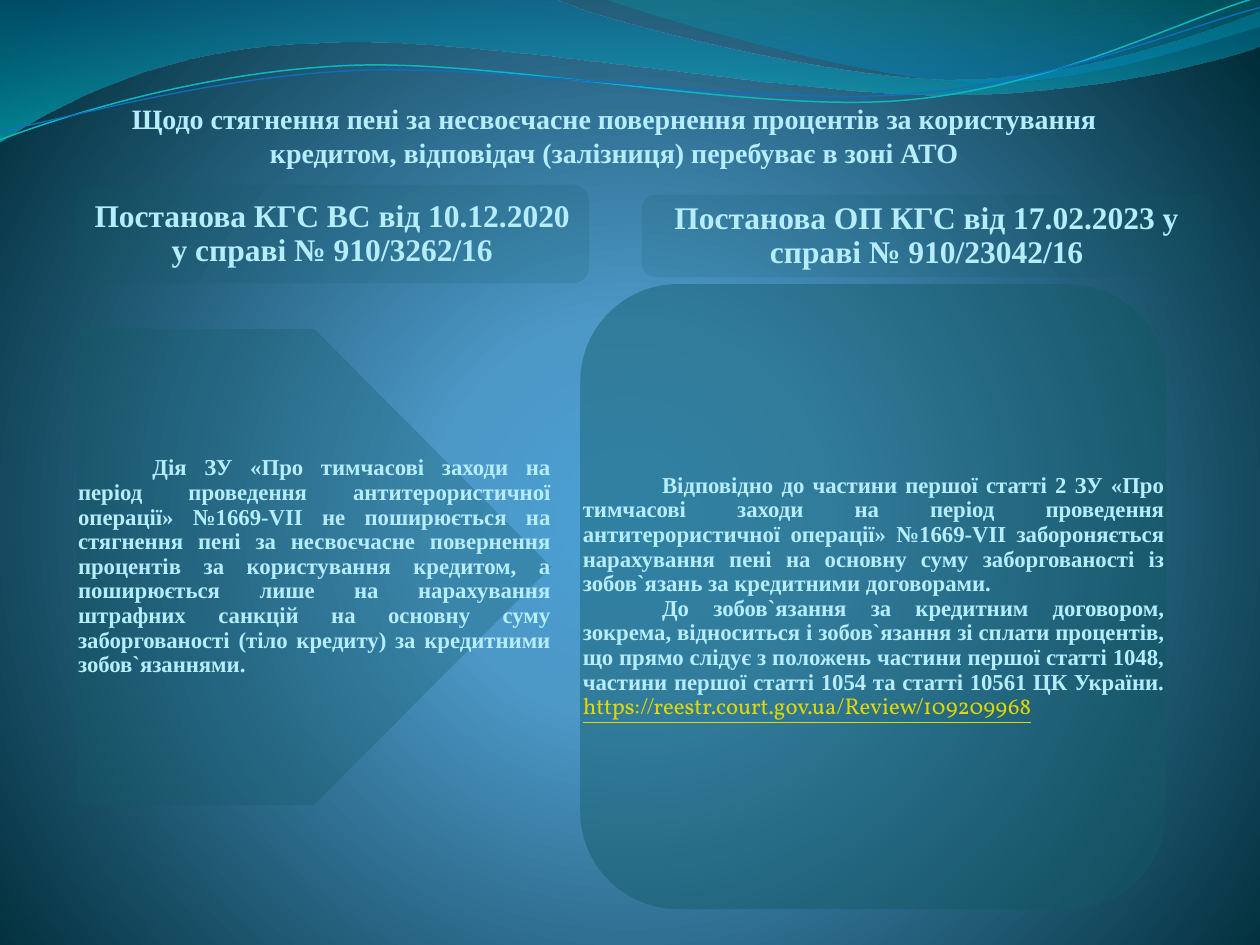
from dataclasses import dataclass
from itertools import chain
from typing import Optional

from lxml.etree import SubElement
from pptx import Presentation
from pptx.dml.color import RGBColor
from pptx.enum.shapes import MSO_SHAPE as Preset
from pptx.enum.text import MSO_ANCHOR as Anchor, MSO_AUTO_SIZE as AutoSize, PP_ALIGN as Align
from pptx.oxml import parse_xml
from pptx.oxml.ns import nsdecls, qn
from pptx.util import Inches, Pt

COLUMNS, ROWS = 100, 75
CELL = Inches(0.1)
SERIF, LINK_FONT = "Times New Roman", "Vollkorn"
PALE, LINK, PANEL = "B5EDFD", "E2D700", "115964"


@dataclass(frozen=True)
class Box:
    column: float
    row: float
    columns: float
    rows: float

    def lengths(self) -> list[int]:
        return [round(value * CELL) for value in (self.column, self.row, self.columns, self.rows)]


@dataclass(frozen=True)
class Run:
    text: str
    size: float
    font: str = SERIF
    color: str = PALE
    bold: bool = True
    underline: bool = False


@dataclass(frozen=True)
class Panel:
    preset: Preset
    box: Box
    opacity: int
    inset: float
    paragraphs: list[list[Run]]
    align: Align = Align.CENTER
    indent: float = 0


@dataclass(frozen=True)
class Wave:
    start: tuple
    segments: list[tuple]
    stops: Optional[list[tuple]] = None
    line: str = ""
    width: float = 0


WAVES = [
    Wave((0, 0), [(44, -0.1), (47.6, 1.7, 66.4, 6.3, 75.8, 6.3), (85.3, 6.3, 95.8, 2.6, 100, 0.9),
                  (100.1, 3.6), (98.3, 4.4, 87, 7.6, 74.6, 7.5), (62.2, 7.5, 38.2, 2.8, 25.7, 3.4),
                  (12.9, 3.6, 4.6, 8.3, -0.1, 11.3)],
         stops=[(0, "0074A1", 45), (100, "00C6CF", 55)]),
    Wave((47.9, -0.1), [(50.9, 1.1, 68.2, 6.2, 76.9, 6.5), (85.6, 6.9, 96.1, 3.2, 100, 2.1), (100, 0)],
         stops=[(0, "00A1A9", 30), (80, "008BBF", 45)]),
    Wave((0, 11.1), [(4.8, 9.3, 15.8, 5.7, 27.7, 5.2), (39.5, 4.7, 59.3, 8.9, 71.3, 8),
                     (83.3, 7.1, 93.8, 1.5, 99.8, -0.2)], line="0AB8BF", width=0.85),
    Wave((0, 10.4), [(4.7, 9.6, 16.4, 6.1, 28.3, 5.6), (40.3, 5.1, 59.7, 8.4, 71.7, 7.5),
                     (83.6, 6.7, 94.1, 2.1, 100, 0.6)], line="0F6FC6", width=0.75),
]

TITLE = Run("Щодо стягнення пені за несвоєчасне повернення процентів за користування кредитом, "
            "відповідач (залізниця) перебуває в зоні АТО", 16)

PANELS = [
    Panel(Preset.PENTAGON, Box(6.1, 26.1, 37.65, 37.8), 29, 0.1, [[Run(
        "Дія ЗУ «Про тимчасові заходи на період проведення антитерористичної операції» №1669-VII "
        "не поширюється на стягнення пені за несвоєчасне повернення процентів за користування "
        "кредитом, а поширюється лише на нарахування штрафних санкцій на основну суму "
        "заборгованості (тіло кредиту) за кредитними зобов`язаннями.", 13)]], Align.JUSTIFY, 5.9),
    Panel(Preset.FLOWCHART_ALTERNATE_PROCESS, Box(46.05, 22.55, 46.5, 49.6), 44, 0.2, [
        [Run("Відповідно до частини першої статті 2 ЗУ «Про тимчасові заходи на період проведення "
             "антитерористичної операції» №1669-VII забороняється нарахування пені на основну суму "
             "заборгованості із зобов`язань за кредитними договорами.", 13)],
        [Run("До зобов`язання за кредитним договором, зокрема, відноситься і зобов`язання зі сплати "
             "процентів, що прямо слідує з положень частини першої статті 1048, частини першої "
             "статті 1054 та статті 10561 ЦК України. ", 13),
         Run("https://reestr.court.gov.ua/Review/109209968", 13, LINK_FONT, LINK, False, True)],
    ], Align.JUSTIFY, 6.3),
    Panel(Preset.ROUNDED_RECTANGLE, Box(6, 14.65, 40.75, 7.85), 17, 0.7,
          [[Run("Постанова КГС ВС від 10.12.2020 у справі № 910/3262/16", 18)]]),
    Panel(Preset.ROUNDED_RECTANGLE, Box(50.95, 15.45, 45.2, 6.55), 16, 0.7,
          [[Run("Постанова ОП КГС від 17.02.2023 у справі № 910/23042/16", 18)]]),
]


def rgb(color: str) -> RGBColor:
    return RGBColor.from_string(color)


def set_gradient(parent, stops: list[tuple], direction: str) -> None:
    marks = "".join(
        f'<a:gs pos="{position * 1000}"><a:srgbClr val="{color}">'
        f'<a:alpha val="{opacity * 1000}"/></a:srgbClr></a:gs>'
        for position, color, opacity in stops)
    gradient = parse_xml(f'<a:gradFill {nsdecls("a")} rotWithShape="1">'
                         f'<a:gsLst>{marks}</a:gsLst>{direction}</a:gradFill>')
    parent.replace(parent.find(qn("a:solidFill")), gradient)


def draw_background(slide) -> None:
    slide.background.fill.solid()
    set_gradient(slide.element.find(f'.//{qn("p:bgPr")}'),
                 [(0, "4AA0D6", 100), (25, "4C98C7", 100), (100, "002C38", 100)],
                 '<a:path path="circle"><a:fillToRect l="10000" t="110000" r="10000" b="100000"/></a:path>')


def bend_segments(shape, segments: list[tuple]) -> None:
    lines = iter(list(shape.element.iter(qn("a:lnTo"))))
    for segment in segments:
        first = next(lines)
        if len(segment) == 6:
            curve = parse_xml(f'<a:cubicBezTo {nsdecls("a")}/>')
            first.addprevious(curve)
            for line in (first, next(lines), next(lines)):
                curve.append(line[0])
                line.getparent().remove(line)


def draw_wave(slide, wave: Wave) -> None:
    numbers = [round(value * CELL) for value in chain(wave.start, *wave.segments)]
    corners = list(zip(numbers[::2], numbers[1::2]))
    builder = slide.shapes.build_freeform(*corners[0], scale=1.0)
    builder.add_line_segments(corners[1:], close=bool(wave.stops))
    shape = builder.convert_to_shape()
    bend_segments(shape, wave.segments)
    shape.shadow.inherit = False
    if wave.stops:
        shape.line.fill.background()
        shape.fill.solid()
        set_gradient(shape.element.spPr, wave.stops, '<a:lin ang="5400000" scaled="1"/>')
    else:
        shape.fill.background()
        shape.line.color.rgb = rgb(wave.line)
        shape.line.width = Pt(wave.width)


def prepare_frame(frame, inset: float, anchor: Anchor) -> None:
    frame.word_wrap = True
    frame.auto_size = AutoSize.NONE
    frame.vertical_anchor = anchor
    frame.margin_left = frame.margin_right = round(inset * CELL)
    frame.margin_top = frame.margin_bottom = round(inset * CELL)


def add_run(paragraph, content: Run) -> None:
    run = paragraph.add_run()
    run.text = content.text
    run.font.name = content.font
    run.font.size = Pt(content.size)
    run.font.bold = content.bold
    run.font.color.rgb = rgb(content.color)
    if content.underline:
        run.font.underline = True
        fill = run.font._element.find(qn("a:solidFill"))
        fill.addnext(parse_xml(f'<a:uFill {nsdecls("a")}><a:solidFill>'
                               f'<a:srgbClr val="{content.color}"/></a:solidFill></a:uFill>'))


def draw_title(slide, box: Box, content: Run) -> None:
    title = slide.shapes.title
    title.left, title.top, title.width, title.height = box.lengths()
    prepare_frame(title.text_frame, 0, Anchor.BOTTOM)
    paragraph = title.text_frame.paragraphs[0]
    paragraph.alignment = Align.CENTER
    add_run(paragraph, content)


def draw_panel(slide, panel: Panel) -> None:
    shape = slide.shapes.add_shape(panel.preset, *panel.box.lengths())
    shape.shadow.inherit = False
    shape.line.fill.background()
    shape.fill.solid()
    shape.fill.fore_color.rgb = rgb(PANEL)
    color = shape.element.spPr.find(f'{qn("a:solidFill")}/{qn("a:srgbClr")}')
    SubElement(color, qn("a:alpha"), val=str(panel.opacity * 1000))

    frame = slide.shapes.add_textbox(*panel.box.lengths()).text_frame
    prepare_frame(frame, panel.inset, Anchor.MIDDLE)
    for index, runs in enumerate(panel.paragraphs):
        paragraph = frame.add_paragraph() if index else frame.paragraphs[0]
        paragraph.alignment = panel.align
        paragraph.line_spacing = 0.9
        paragraph._p.get_or_add_pPr().set("indent", str(round(panel.indent * CELL)))
        for content in runs:
            add_run(paragraph, content)


def main() -> None:
    presentation = Presentation()
    presentation.slide_width = COLUMNS * CELL
    presentation.slide_height = ROWS * CELL
    slide = presentation.slides.add_slide(presentation.slide_layouts[5])
    draw_background(slide)
    for wave in WAVES:
        draw_wave(slide, wave)
    draw_title(slide, Box(6.65, 8, 84.2, 5.4), TITLE)
    for panel in PANELS:
        draw_panel(slide, panel)
    presentation.save("out.pptx")


if __name__ == "__main__":
    main()
